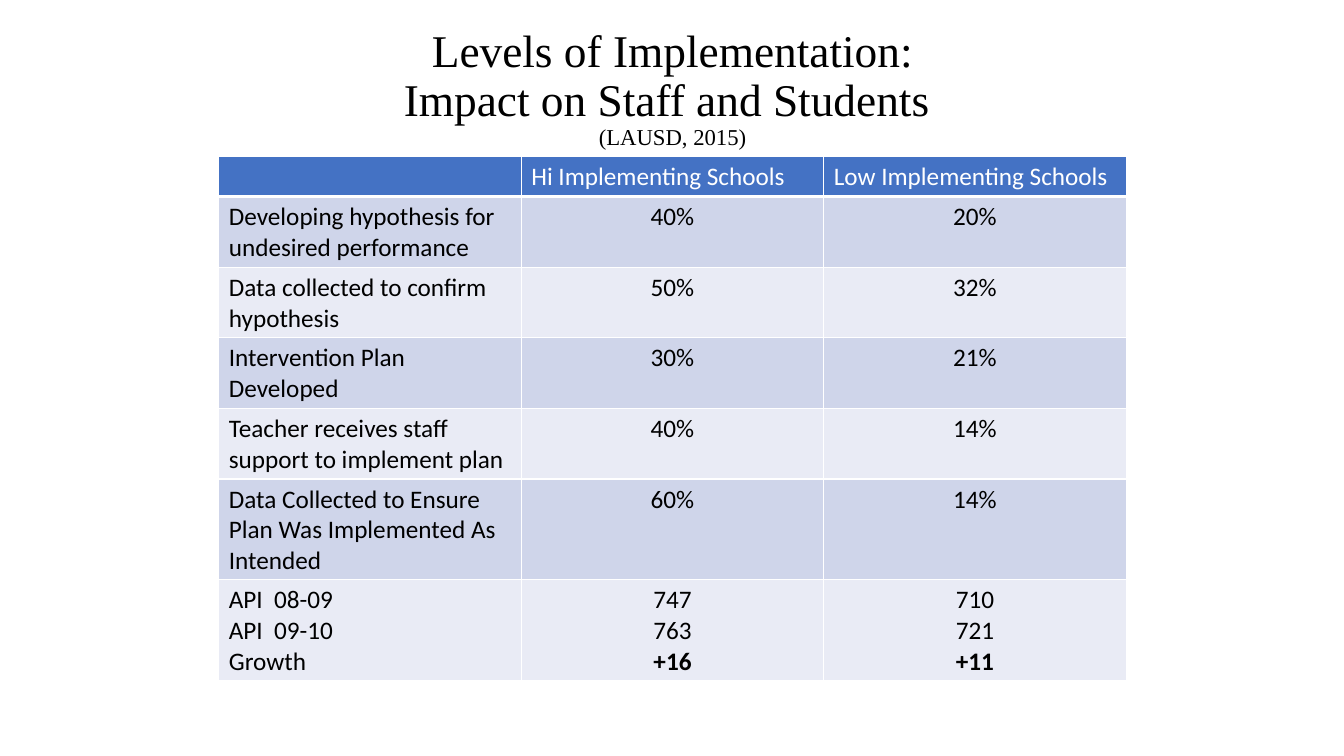
from pptx import Presentation
from pptx.dml.color import RGBColor
from pptx.enum.text import MSO_ANCHOR, PP_ALIGN
from pptx.oxml.ns import qn
from pptx.util import Inches, Pt
from lxml import etree

CENTER = PP_ALIGN.CENTER
LEFT = PP_ALIGN.LEFT
MIDDLE = MSO_ANCHOR.MIDDLE

BLACK = "000000"
WHITE = "FFFFFF"
HEADER_FILL = "4472C4"
BAND_FILLS = ("CFD5EA", "E9EBF5")
TITLE_FONT = "Times New Roman"
TABLE_FONT = "Calibri"

TITLE_LINES = [
    ("Levels of Implementation:", 32.4),
    ("Impact on Staff and Students ", 32.4),
    ("(LAUSD, 2015)", 16.2),
]
ROW_HEIGHTS = [0.39] + [0.68] * 4 + [0.97] * 2
COLUMN_WIDTH = 3
TABLE_ROWS = [
    ("", "Hi Implementing Schools", "Low Implementing Schools"),
    ("Developing hypothesis for undesired performance", "40%", "20%"),
    ("Data collected to confirm hypothesis", "50%", "32%"),
    ("Intervention Plan Developed", "30%", "21%"),
    ("Teacher receives staff support to implement plan", "40%", "14%"),
    ("Data Collected to Ensure Plan Was Implemented As Intended", "60%", "14%"),
    ("API  08-09\nAPI  09-10\nGrowth", "747\n763\n+16", "710\n721\n+11"),
]


def color(value):
    return RGBColor.from_string(value)


def add_span(para, text, font, size, fill, bold=False):
    span = para.add_run()
    span.text = text
    span.font.name = font
    span.font.size = Pt(size)
    span.font.bold = bold
    span.font.color.rgb = color(fill)


def add_title(page):
    box = page.shapes.add_textbox(Inches(2.42), Inches(0.22), Inches(8.5), Inches(1.33))
    frame = box.text_frame
    frame.word_wrap = True
    frame.vertical_anchor = MIDDLE
    para = frame.paragraphs[0]
    para.alignment = CENTER
    para.line_spacing = 0.9
    for index, (text, size) in enumerate(TITLE_LINES):
        if index:
            para.add_line_break()
        add_span(para, text, TITLE_FONT, size, BLACK)


def set_borders(cell, bottom_width):
    properties = cell._tc.get_or_add_tcPr()
    for side, width in (("L", 1), ("R", 1), ("T", 1), ("B", bottom_width)):
        line = etree.SubElement(properties, qn(f"a:ln{side}"), w=str(Pt(width)))
        solid = etree.SubElement(line, qn("a:solidFill"))
        etree.SubElement(solid, qn("a:srgbClr"), val=WHITE)


def fill_cell(cell, text, fill, font_color, alignment, bottom_width):
    set_borders(cell, bottom_width)
    cell.fill.solid()
    cell.fill.fore_color.rgb = color(fill)
    frame = cell.text_frame
    for index, line in enumerate(text.split("\n")):
        para = frame.add_paragraph() if index else frame.paragraphs[0]
        para.alignment = alignment
        if line:
            add_span(para, line, TABLE_FONT, 18, font_color, line.startswith("+"))
        else:
            para.font.size = Pt(18)


def add_results_table(page):
    column_count = len(TABLE_ROWS[0])
    table = page.shapes.add_table(
        len(TABLE_ROWS), column_count, Inches(2.17), Inches(1.55),
        Inches(COLUMN_WIDTH * column_count), Inches(sum(ROW_HEIGHTS)),
    ).table
    for column in table.columns:
        column.width = Inches(COLUMN_WIDTH)
    for row_index, (texts, height) in enumerate(zip(TABLE_ROWS, ROW_HEIGHTS)):
        table.rows[row_index].height = Inches(height)
        is_header = row_index == 0
        fill = HEADER_FILL if is_header else BAND_FILLS[(row_index - 1) % 2]
        for column_index, text in enumerate(texts):
            alignment = LEFT if is_header or column_index == 0 else CENTER
            fill_cell(
                table.cell(row_index, column_index), text, fill,
                WHITE if is_header else BLACK, alignment, 3 if is_header else 1,
            )


def main():
    deck = Presentation()
    deck.slide_width = Inches(13.33)
    deck.slide_height = Inches(7.5)
    page = deck.slides.add_slide(deck.slide_layouts[6])
    add_title(page)
    add_results_table(page)
    deck.save("out.pptx")


if __name__ == "__main__":
    main()
